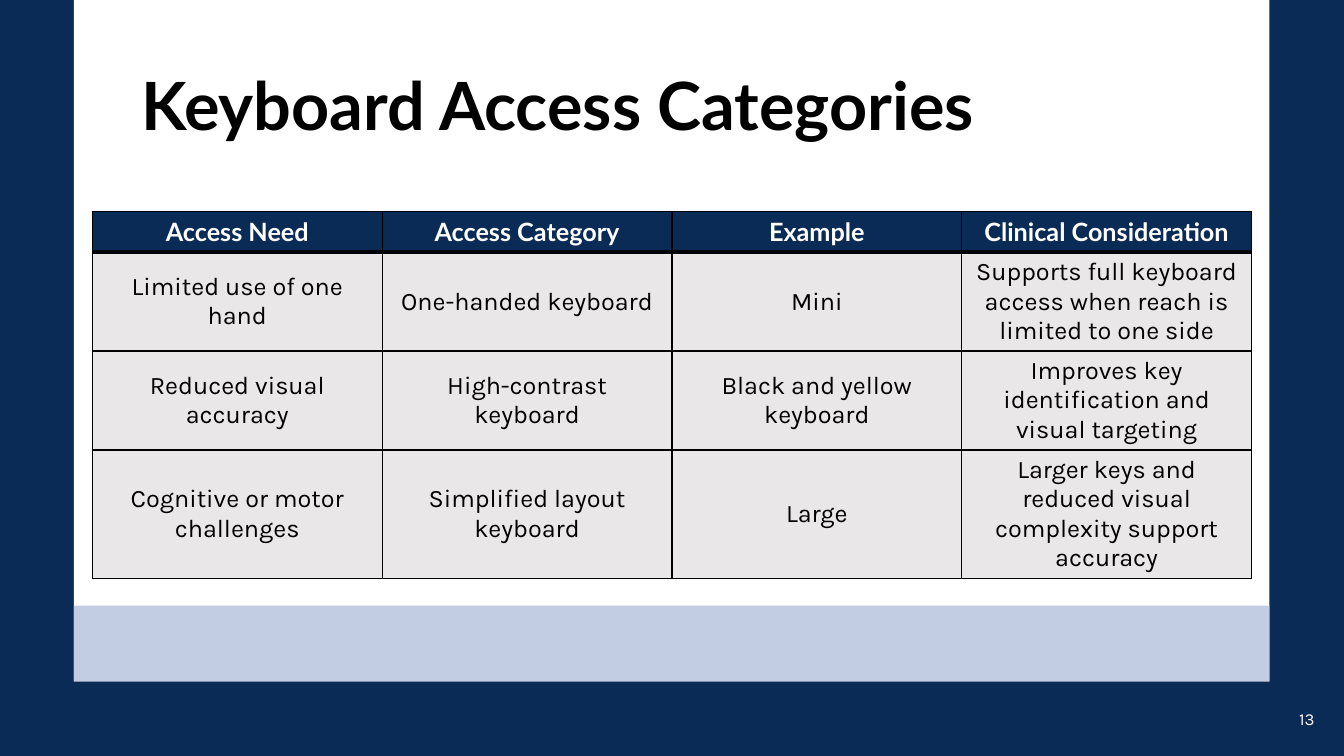
from lxml.etree import SubElement
from pptx import Presentation
from pptx.dml.color import RGBColor
from pptx.enum.shapes import MSO_SHAPE
from pptx.enum.text import MSO_ANCHOR, MSO_AUTO_SIZE, PP_ALIGN
from pptx.oxml.ns import qn
from pptx.util import Pt

COLOURS = {
    "navy": "0B2B57",
    "band": "C2CDE3",
    "cell": "EAE7E8",
    "white": "FFFFFF",
    "black": "000000",
}
HEADING_FONT, BODY_FONT = "Lato", "Karla"
ACCESS_ROWS = [
    ("Access Need", "Access Category", "Example", "Clinical Consideration"),
    ("Limited use of one hand", "One-handed keyboard", "Mini",
     "Supports full keyboard access when reach is limited to one side"),
    ("Reduced visual accuracy", "High-contrast keyboard", "Black and yellow keyboard",
     "Improves key identification and visual targeting"),
    ("Cognitive or motor challenges", "Simplified layout keyboard", "Large",
     "Larger keys and reduced visual complexity support accuracy"),
]
ROW_HEIGHTS = (29.2, 70.5, 70.5, 91.8)


def colour(name):
    """Return the named colour."""
    return RGBColor.from_string(COLOURS[name])


def style(paragraph, size, face, ink, align, bold=False):
    """Set the font and alignment of a paragraph."""
    paragraph.alignment = align
    paragraph.font.size = Pt(size)
    paragraph.font.name = face
    paragraph.font.bold = bold
    paragraph.font.color.rgb = colour(ink)


def set_margins(frame, margin):
    """Give a text frame the same margin on every side."""
    frame.margin_left = frame.margin_right = Pt(margin)
    frame.margin_top = frame.margin_bottom = Pt(margin)


def add_panel(slide, left, top, width, height, fill):
    """Place a plain rectangle behind the title."""
    panel = slide.shapes.add_shape(
        MSO_SHAPE.RECTANGLE, Pt(left), Pt(top), Pt(width), Pt(height))
    panel.shadow.inherit = False
    panel.fill.solid()
    panel.fill.fore_color.rgb = colour(fill)
    panel.line.fill.background()
    slide.shapes.title.element.addprevious(panel.element)


def add_backdrop(slide, left, top, width, height, band_height):
    """Draw the white page with the pale band along its foot."""
    slide.background.fill.solid()
    slide.background.fill.fore_color.rgb = colour("navy")
    add_panel(slide, left, top, width, height, "white")
    add_panel(slide, left, top + height - band_height, width, band_height, "band")


def add_heading(slide, left, top, width, height):
    """Fill and place the title."""
    heading = slide.shapes.title
    heading.left, heading.top = Pt(left), Pt(top)
    heading.width, heading.height = Pt(width), Pt(height)
    frame = heading.text_frame
    frame.text = "Keyboard Access Categories"
    frame.word_wrap = True
    frame.auto_size = MSO_AUTO_SIZE.NONE
    frame.vertical_anchor = MSO_ANCHOR.MIDDLE
    set_margins(frame, 3.6)
    style(frame.paragraphs[0], 47.5, HEADING_FONT, "black", PP_ALIGN.LEFT, True)


def set_borders(cell, top, bottom):
    """Draw black cell borders, with the given top and bottom widths."""
    properties = cell._tc.get_or_add_tcPr()
    for side, weight in (("L", 1), ("R", 1), ("T", top), ("B", bottom)):
        border = SubElement(properties, qn(f"a:ln{side}"), w=str(Pt(weight)))
        SubElement(SubElement(border, qn("a:solidFill")), qn("a:srgbClr"),
                   val=COLOURS["black"])


def add_access_table(slide, left, top, width):
    """Build the table of access needs with equal columns."""
    column_count = len(ACCESS_ROWS[0])
    table = slide.shapes.add_table(
        len(ACCESS_ROWS), column_count, Pt(left), Pt(top), Pt(width),
        Pt(sum(ROW_HEIGHTS))).table
    table.horz_banding = False
    for column in table.columns:
        column.width = Pt(width / column_count)
    for row_index, entries in enumerate(ACCESS_ROWS):
        table.rows[row_index].height = Pt(ROW_HEIGHTS[row_index])
        is_header = row_index == 0
        for column_index, entry in enumerate(entries):
            cell = table.cell(row_index, column_index)
            set_borders(cell, 3 if row_index == 1 else 1, 3 if is_header else 1)
            cell.fill.solid()
            cell.fill.fore_color.rgb = colour("navy" if is_header else "cell")
            cell.vertical_anchor = MSO_ANCHOR.MIDDLE
            cell.text = entry
            style(cell.text_frame.paragraphs[0], 18,
                  HEADING_FONT if is_header else BODY_FONT,
                  "white" if is_header else "black", PP_ALIGN.CENTER, is_header)


def add_page_number(slide, left, top, width, height):
    """Write the page number in the corner."""
    frame = slide.shapes.add_textbox(
        Pt(left), Pt(top), Pt(width), Pt(height)).text_frame
    frame.text = "13"
    frame.word_wrap = False
    frame.vertical_anchor = MSO_ANCHOR.MIDDLE
    set_margins(frame, 5)
    style(frame.paragraphs[0], 12, BODY_FONT, "white", PP_ALIGN.CENTER)


def main():
    """Build and save the slide."""
    deck = Presentation()
    deck.slide_width, deck.slide_height = Pt(960), Pt(540)
    slide = deck.slides.add_slide(deck.slide_layouts[5])
    add_backdrop(slide, 52.8, 0, 854, 486.8, 54.2)
    add_heading(slide, 97.2, 19.4, 746, 109.4)
    add_access_table(slide, 66, 151, 828)
    add_page_number(slide, 921.6, 501.2, 23.8, 24.4)
    deck.save("out.pptx")


if __name__ == "__main__":
    main()
